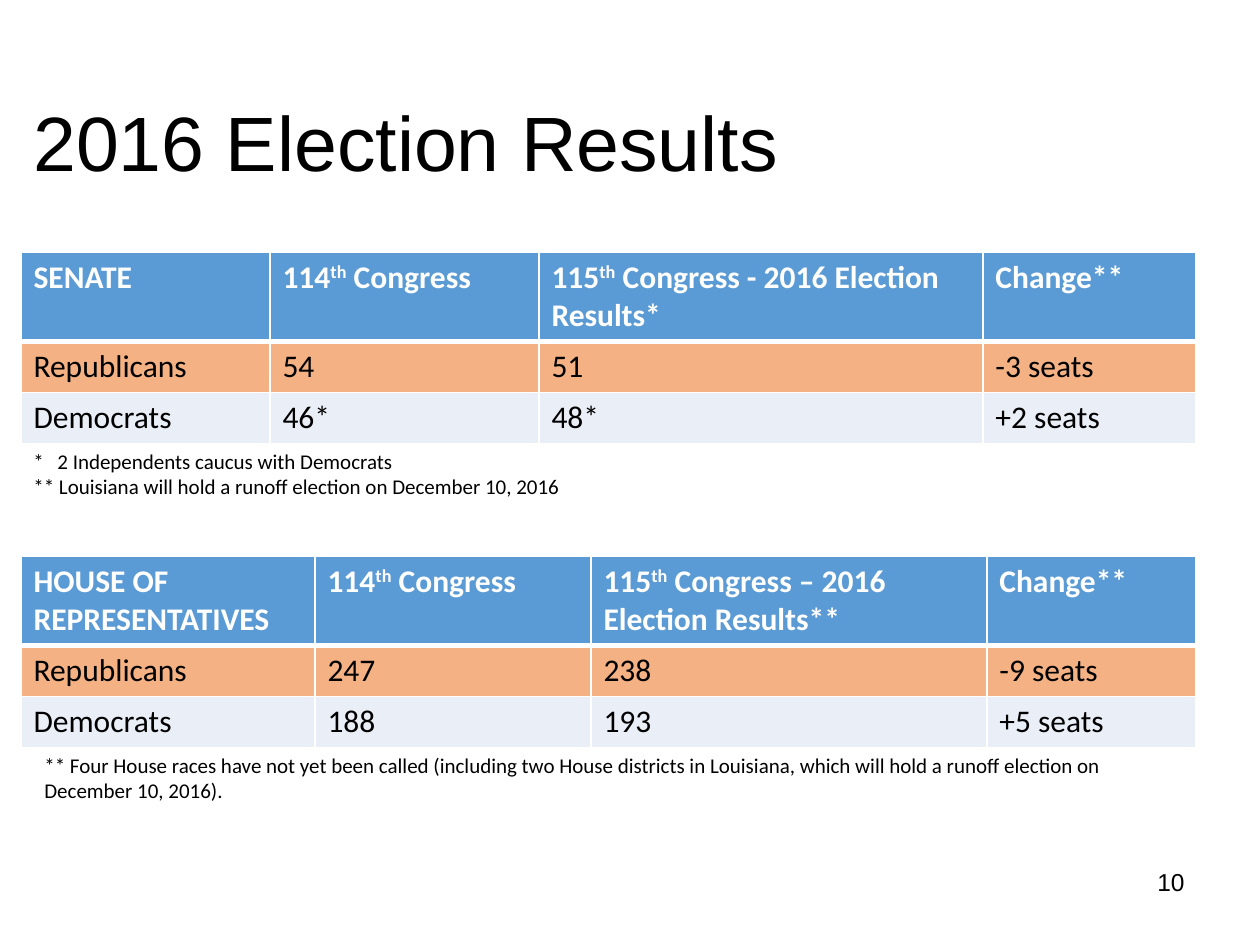
from lxml.etree import SubElement
from pptx import Presentation
from pptx.dml.color import RGBColor
from pptx.enum.text import MSO_AUTO_SIZE as AutoSize, PP_ALIGN as Align
from pptx.oxml.ns import qn
from pptx.util import Pt

PX = 914400 // 126
WHITE, BLACK = "FFFFFF", "000000"

TITLE = {"name": "Arial", "size": Pt(44), "color": BLACK}
NUMBER = {"name": "Arial", "size": Pt(14), "color": BLACK}
NOTE = {"name": "Calibri", "size": Pt(12), "color": BLACK}
HEADER = {"name": "Calibri", "size": Pt(18), "bold": True, "color": WHITE}
BODY = {**HEADER, "bold": False, "color": BLACK}

TEXTS = [
    ((21, 88, 777, 106), ["2016 Election Results"], TITLE, Align.LEFT, False),
    ((21, 442, 587, 63), ["*\t2 Independents caucus with Democrats",
                          "** Louisiana will hold a runoff election on December 10, 2016"],
     NOTE, Align.LEFT, True),
    ((32, 746, 1165, 63), ["** Four House races have not yet been called (including two House districts "
                           "in Louisiana, which will hold a runoff election on December 10, 2016)."],
     NOTE, Align.LEFT, True),
    ((903, 861, 294, 66), ["10"], NUMBER, Align.RIGHT, True),
]
NOTE_TAB = 24

CHAMBERS = [
    (252, (249, 269, 444, 213), [
        ("SENATE", "114^th^ Congress", "115^th^ Congress - 2016 Election Results*", "Change**"),
        ("Republicans", "54", "51", "-3 seats"),
        ("Democrats", "46*", "48*", "+2 seats")]),
    (556, (294, 276, 396, 209), [
        ("HOUSE OF REPRESENTATIVES", "114^th^ Congress", "115^th^ Congress – 2016 Election Results**", "Change**"),
        ("Republicans", "247", "238", "-9 seats"),
        ("Democrats", "188", "193", "+5 seats")]),
]
TABLE_LEFT = 21
ROWS = [  # height, fill, text format, top and bottom border in points
    (88, "5B9BD5", HEADER, 1, 3),
    (51, "F4B183", BODY, 3, 1),
    (51, "EAEFF7", BODY, 1, 1),
]


def rgb(value):
    """Turn a hex string into a colour."""
    return RGBColor.from_string(value)


def write(paragraph, text, style):
    """Write text in a format, raising the parts between carets."""
    for index, part in enumerate(text.split("^")):
        run = paragraph.add_run()
        run.text = part
        for key, value in style.items():
            if key == "color":
                run.font.color.rgb = rgb(value)
            else:
                setattr(run.font, key, value)
        if index % 2:
            run.font._element.set("baseline", "30000")


def add_text(slide, box, lines, style, align, wrap):
    """Add a text box with one paragraph per line."""
    frame = slide.shapes.add_textbox(*(v * PX for v in box)).text_frame
    frame.word_wrap = wrap
    frame.auto_size = AutoSize.NONE if style is NUMBER else AutoSize.SHAPE_TO_FIT_TEXT
    for index, line in enumerate(lines):
        paragraph = frame.add_paragraph() if index else frame.paragraphs[0]
        paragraph.alignment = align
        if "\t" in line:
            tabs = SubElement(paragraph._p.get_or_add_pPr(), qn("a:tabLst"))
            SubElement(tabs, qn("a:tab"), pos=str(NOTE_TAB * PX), algn="l")
        write(paragraph, line, style)


def add_border(cell, side, points):
    """Draw one white cell border."""
    line = SubElement(cell._tc.get_or_add_tcPr(), qn(f"a:ln{side}"), w=str(Pt(points)))
    SubElement(SubElement(line, qn("a:solidFill")), qn("a:srgbClr"), val=WHITE)


def add_chamber(slide, top, widths, cells):
    """Add the result table of one chamber."""
    height = sum(row[0] for row in ROWS)
    box = (TABLE_LEFT, top, sum(widths), height)
    table = slide.shapes.add_table(len(ROWS), len(widths), *(v * PX for v in box)).table
    for column, width in zip(table.columns, widths):
        column.width = width * PX
    for row, texts, (row_height, fill, style, above, below) in zip(table.rows, cells, ROWS):
        row.height = row_height * PX
        for cell, text in zip(row.cells, texts):
            for side, points in zip("LRTB", (1, 1, above, below)):
                add_border(cell, side, points)
            cell.fill.solid()
            cell.fill.fore_color.rgb = rgb(fill)
            write(cell.text_frame.paragraphs[0], text, style)


def main():
    """Build the election results slide."""
    deck = Presentation()
    deck.slide_width, deck.slide_height = 1260 * PX, 945 * PX
    slide = deck.slides.add_slide(deck.slide_layouts[6])
    for chamber in CHAMBERS:
        add_chamber(slide, *chamber)
    for text in TEXTS:
        add_text(slide, *text)
    deck.save("out.pptx")


if __name__ == "__main__":
    main()
